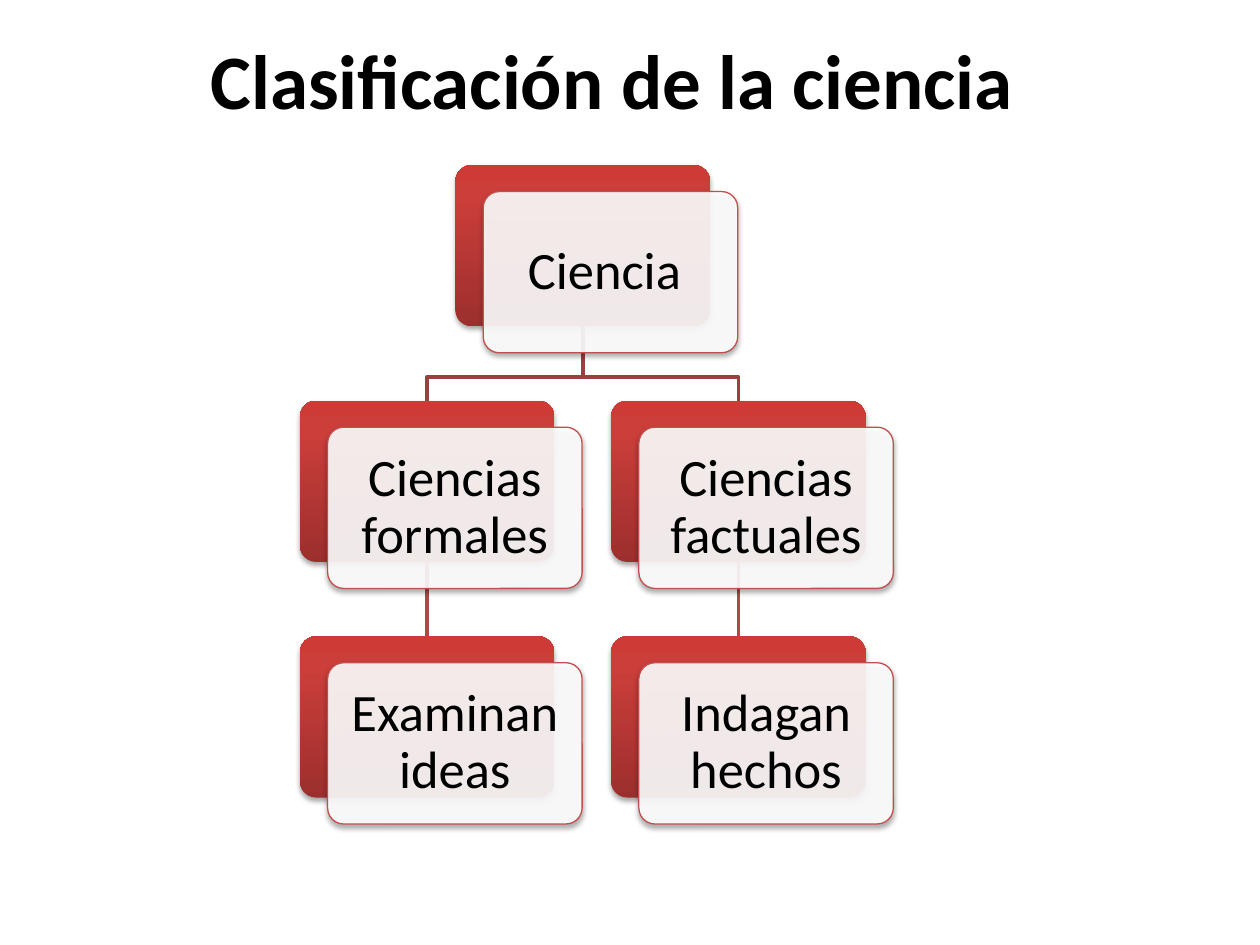
from lxml import etree
from pptx import Presentation
from pptx import util as u
from pptx.dml.color import RGBColor
from pptx.enum import shapes, text
from pptx.oxml import parse_xml
from pptx.oxml.ns import nsdecls, qn

BLACK = RGBColor(0x00, 0x00, 0x00)
WHITE = RGBColor(0xFF, 0xFF, 0xFF)
CARD_EDGE = RGBColor(0xC0, 0x50, 0x4D)
ROOT_LINK = RGBColor(0x9A, 0x40, 0x3E)
LEAF_LINK = RGBColor(0xAE, 0x49, 0x46)
PANEL_STOPS = [
    (0, RGBColor(0x9C, 0x2F, 0x2D)),
    (80, RGBColor(0xCB, 0x3E, 0x3A)),
    (100, RGBColor(0xCE, 0x3B, 0x37)),
]

NODE_WIDTH, NODE_HEIGHT = 2.02, 1.28
CARD_SHIFT_X, CARD_SHIFT_Y = 0.22, 0.21
LEFT, COLUMN_STEP = 2.38, 2.47
TOP, ROW_STEP = 1.31, 1.87
BEND_DROP = 0.4

# Label, column and row of each node; the root stands between the columns.
NODES = [
    ("Ciencia ", 0.5, 0),
    ("Ciencias formales", 0, 1),
    ("Examinan ideas", 0, 2),
    ("Ciencias factuales", 1, 1),
    ("Indagan hechos", 1, 2),
]


def write_text(frame, content, size, bold=False, line_spacing=None):
    frame.word_wrap = True
    frame.vertical_anchor = text.MSO_ANCHOR.MIDDLE
    para = frame.paragraphs[0]
    para.alignment = text.PP_ALIGN.CENTER
    if line_spacing:
        para.line_spacing = line_spacing
    span = para.add_run()
    span.text = content
    span.font.name = "Calibri"
    span.font.size = u.Pt(size)
    span.font.bold = bold
    span.font.color.rgb = BLACK


def add_shadow(shape):
    """Give the shape a soft shadow that falls straight down."""
    shape.shadow.inherit = False
    effects = shape._element.spPr.find(qn("a:effectLst"))
    effects.append(parse_xml(
        f'<a:outerShdw {nsdecls("a")} blurRad="{u.Pt(3.1)}" dist="{u.Pt(1.8)}" '
        'dir="5400000" rotWithShape="0"><a:srgbClr val="000000">'
        '<a:alpha val="35000"/></a:srgbClr></a:outerShdw>'))


def add_round_box(page, left, top):
    box = page.shapes.add_shape(
        shapes.MSO_SHAPE.ROUNDED_RECTANGLE, u.Inches(left), u.Inches(top),
        u.Inches(NODE_WIDTH), u.Inches(NODE_HEIGHT))
    box.adjustments[0] = 0.1
    add_shadow(box)
    return box


def add_panel(page, left, top):
    """Add the red box behind a card."""
    panel = add_round_box(page, left, top)
    panel.line.fill.background()
    panel.fill.gradient()
    panel.fill.gradient_angle = 90
    stops = panel._element.spPr.find(qn("a:gradFill")).find(qn("a:gsLst"))
    for stop in list(stops):
        stops.remove(stop)
    for position, color in PANEL_STOPS:
        stop = etree.SubElement(stops, qn("a:gs"), pos=str(position * 1000))
        etree.SubElement(stop, qn("a:srgbClr"), val=str(color))
    return panel


def add_card(page, left, top, label):
    """Add the nearly opaque white box that carries the label."""
    card = add_round_box(page, left, top)
    card.fill.solid()
    card.fill.fore_color.rgb = WHITE
    color = card._element.spPr.find(qn("a:solidFill"))[0]
    etree.SubElement(color, qn("a:alpha"), val="90000")
    card.line.color.rgb = CARD_EDGE
    card.line.width = u.Pt(0.75)
    frame = card.text_frame
    frame.margin_left = frame.margin_right = u.Inches(0.12)
    frame.margin_top = frame.margin_bottom = u.Inches(0.12)
    write_text(frame, label, 30, line_spacing=0.9)


def format_link(link, color):
    link.line.color.rgb = color
    link.line.width = u.Pt(2)


def add_straight_link(page, parent, child):
    middle = parent.left + parent.width // 2
    link = page.shapes.add_connector(
        shapes.MSO_CONNECTOR.STRAIGHT,
        middle, parent.top + parent.height, middle, child.top)
    link.begin_connect(parent, 2)
    link.end_connect(child, 0)
    etree.SubElement(link._element.spPr, qn("a:effectLst"))
    format_link(link, LEAF_LINK)


def add_bent_link(page, parent, child):
    start_x = parent.left + parent.width // 2
    start_y = parent.top + parent.height
    end_x = child.left + child.width // 2
    bend_y = start_y + u.Inches(BEND_DROP)
    builder = page.shapes.build_freeform(start_x, start_y)
    builder.add_line_segments(
        [(start_x, bend_y), (end_x, bend_y), (end_x, child.top)], close=False)
    link = builder.convert_to_shape()
    link.fill.background()
    link.shadow.inherit = False
    format_link(link, ROOT_LINK)


def add_title(page, content):
    title = page.shapes.title
    title.left, title.top = u.Inches(0.43), u.Inches(0)
    title.width, title.height = u.Inches(9), u.Inches(1.25)
    write_text(title.text_frame, content, 44, bold=True)


def main():
    deck = Presentation()
    deck.slide_width, deck.slide_height = u.Inches(10), u.Inches(7.5)
    page = deck.slides.add_slide(deck.slide_layouts[5])
    add_title(page, "Clasificación de la ciencia ")

    places = [(label, LEFT + column * COLUMN_STEP, TOP + row * ROW_STEP)
              for label, column, row in NODES]
    root, formal, ideas, factual, facts = [
        add_panel(page, left, top) for _, left, top in places]
    for branch, leaf in ((formal, ideas), (factual, facts)):
        add_bent_link(page, root, branch)
        add_straight_link(page, branch, leaf)
    for label, left, top in places:
        add_card(page, left + CARD_SHIFT_X, top + CARD_SHIFT_Y, label)

    deck.save("out.pptx")


if __name__ == "__main__":
    main()
